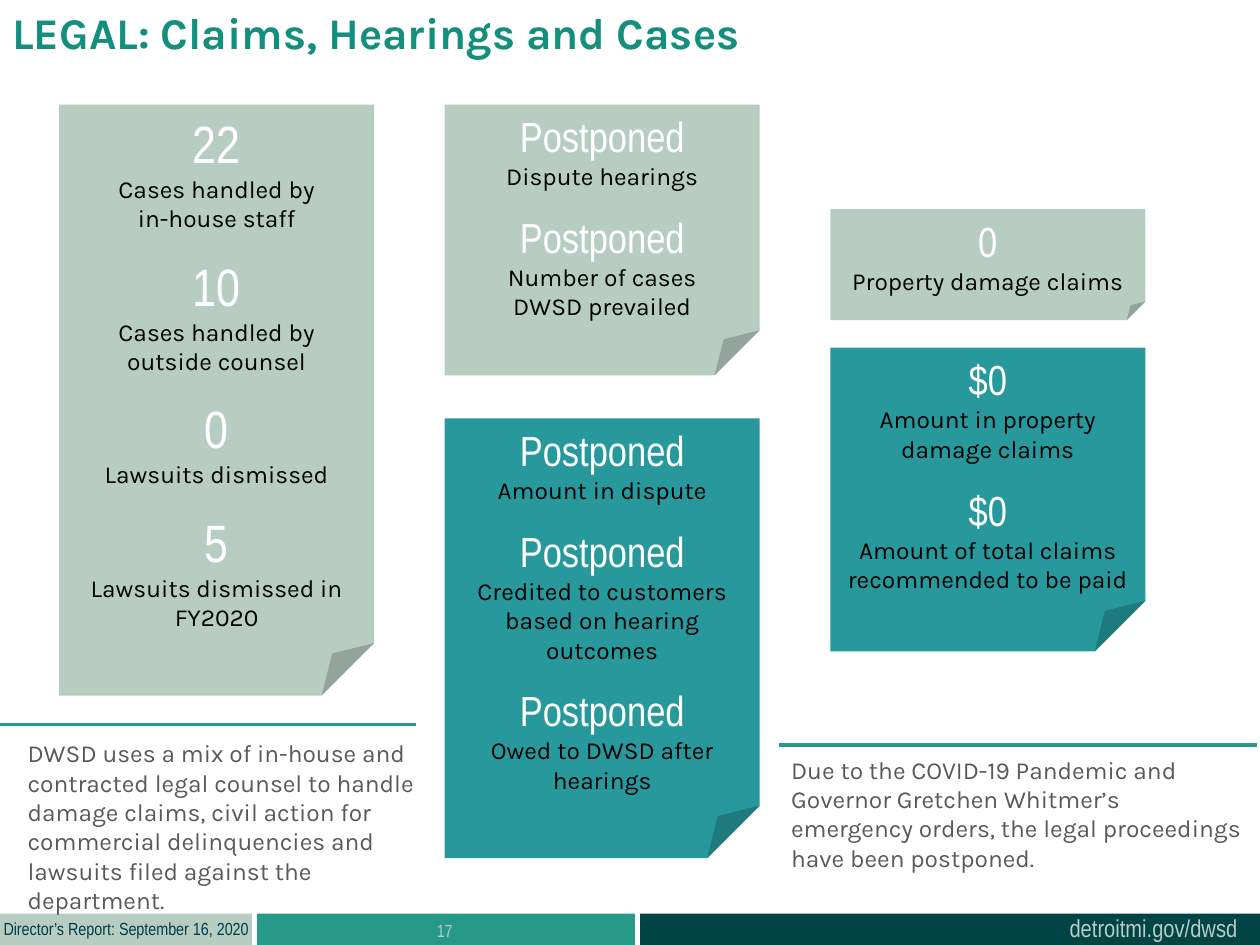
import copy

import pptx
import pptx.dml.color
import pptx.enum.shapes
import pptx.enum.text
import pptx.oxml.ns
import pptx.util

WIDTH, HEIGHT = 10, 7.5
SAGE, TEAL, GREEN, DARK = "B7CDC2", "27999D", "279989", "004445"
NARROW, KARLA = "Arial Narrow", "Karla"
LEFT, CENTER = pptx.enum.text.PP_ALIGN.LEFT, pptx.enum.text.PP_ALIGN.CENTER

CARD_WIDTH = 2.5
CARD_LEFT = [0.47, 3.53, 6.59]
LABEL = {"name": KARLA, "size": 14, "color": "000000"}
ENTRY_GAP = 12

# column, top, height, fill, figure size, (figure, label) entries
CARDS = [
    (2, 1.66, 0.88, SAGE, 24, [("0", "Property damage claims")]),
    (2, 2.76, 2.41, TEAL, 24, [
        ("$0", "Amount in property\vdamage claims"),
        ("$0", "Amount of total claims recommended to be paid")]),
    (1, 0.83, 2.15, SAGE, 24, [
        ("Postponed", "Dispute hearings"),
        ("Postponed", "Number of cases\vDWSD prevailed")]),
    (1, 3.32, 3.49, TEAL, 24, [
        ("Postponed", "Amount in dispute"),
        ("Postponed", "Credited to customers based on hearing outcomes"),
        ("Postponed", "Owed to DWSD after hearings")]),
    (0, 0.83, 4.69, SAGE, 30, [
        ("22", "Cases handled by\vin-house staff"),
        ("10", "Cases handled by\voutside counsel"),
        ("0", "Lawsuits dismissed"),
        ("5", "Lawsuits dismissed in FY2020")]),
]

FOOTER_TOP, FOOTER_HEIGHT = 7.25, 0.25
FOOTER_BARS = [(0, 2, SAGE), (2.04, 3, GREEN), (5.08, 4.92, DARK)]

NOTE = {"name": KARLA, "size": 14, "color": "595959"}
# position, text, format, alignment, wrap
TEXTS = [
    ((8.39, 7.2, 1.55, 0.34), "detroitmi.gov/dwsd",
     {"name": NARROW, "size": 14, "color": SAGE}, LEFT, False),
    ((-0.07, 7.24, 2.16, 0.27), "Director’s Report: September 16, 2020",
     {"name": NARROW, "size": 10, "color": "003B49"}, LEFT, False),
    ((2.03, 7.25, 3, 0.25), "17",
     {"name": NARROW, "size": 10, "color": SAGE}, CENTER, True),
    ((0, 0, 7.59, 0.77), "LEGAL: Claims, Hearings and Cases",
     {"name": KARLA, "size": 25, "color": "138F7E", "bold": True}, LEFT, True),
    ((6.18, 5.94, 3.82, 1.04),
     "Due to the COVID-19 Pandemic and Governor Gretchen Whitmer’s emergency "
     "orders, the legal proceedings have been postponed.", NOTE, LEFT, True),
    ((0.12, 5.81, 3.41, 1.28),
     "DWSD uses a mix of in-house and contracted legal counsel to handle damage "
     "claims, civil action for commercial delinquencies and lawsuits filed "
     "against the department.", NOTE, LEFT, True),
]

# start, end, height on the slide
RULES = [(9.98, 6.18, 5.91), (3.3, 0, 5.75)]


def rgb(value):
    return pptx.dml.color.RGBColor.from_string(value)


def inches(values):
    return [pptx.util.Inches(value) for value in values]


def write(para, text, style, align):
    """Fill a paragraph; its line breaks take the format of its runs."""
    para.text = text
    para.alignment = align
    for span in para.runs:
        for key, value in style.items():
            if key == "color":
                span.font.color.rgb = rgb(value)
            else:
                setattr(span.font, key, pptx.util.Pt(value) if key == "size" else value)
    for line_break in para._p.findall(pptx.oxml.ns.qn("a:br")):
        line_break.append(copy.deepcopy(para.runs[0]._r.rPr))


def add_filled(page, kind, position, color):
    shape = page.shapes.add_shape(kind, *inches(position))
    shape.shadow.inherit = False
    shape.fill.solid()
    shape.fill.fore_color.rgb = rgb(color)
    shape.line.fill.background()
    return shape


def add_card(page, column, top, height, color, size, entries):
    card = add_filled(page, pptx.enum.shapes.MSO_SHAPE.FOLDED_CORNER,
                      (CARD_LEFT[column], top, CARD_WIDTH, height), color)
    frame = card.text_frame
    frame.word_wrap = True
    frame.vertical_anchor = pptx.enum.text.MSO_ANCHOR.TOP
    figure_style = {"name": NARROW, "size": size, "color": "FFFFFF"}
    for index, (figure, label) in enumerate(entries):
        para = frame.add_paragraph() if index else frame.paragraphs[0]
        write(para, figure, figure_style, CENTER)
        if index:
            para.space_before = pptx.util.Pt(ENTRY_GAP)
        write(frame.add_paragraph(), label, LABEL, CENTER)


def add_text(page, position, text, style, align, wrap):
    box = page.shapes.add_textbox(*inches(position))
    box.text_frame.word_wrap = wrap
    write(box.text_frame.paragraphs[0], text, style, align)


def add_rule(page, start, end, top):
    rule = page.shapes.add_connector(pptx.enum.shapes.MSO_CONNECTOR.STRAIGHT,
                                     *inches((start, top, end, top)))
    rule.line.color.rgb = rgb(GREEN)
    rule.line.width = pptx.util.Pt(2.25)
    rule._element.spPr.append(pptx.oxml.xmlchemy.OxmlElement("a:effectLst"))


def main():
    deck = pptx.Presentation()
    deck.slide_width, deck.slide_height = inches((WIDTH, HEIGHT))
    page = deck.slides.add_slide(deck.slide_layouts[6])
    for left, width, color in FOOTER_BARS:
        add_filled(page, pptx.enum.shapes.MSO_SHAPE.RECTANGLE,
                   (left, FOOTER_TOP, width, FOOTER_HEIGHT), color)
    for card in CARDS:
        add_card(page, *card)
    for text in TEXTS:
        add_text(page, *text)
    for rule in RULES:
        add_rule(page, *rule)
    deck.save("out.pptx")


if __name__ == "__main__":
    main()
